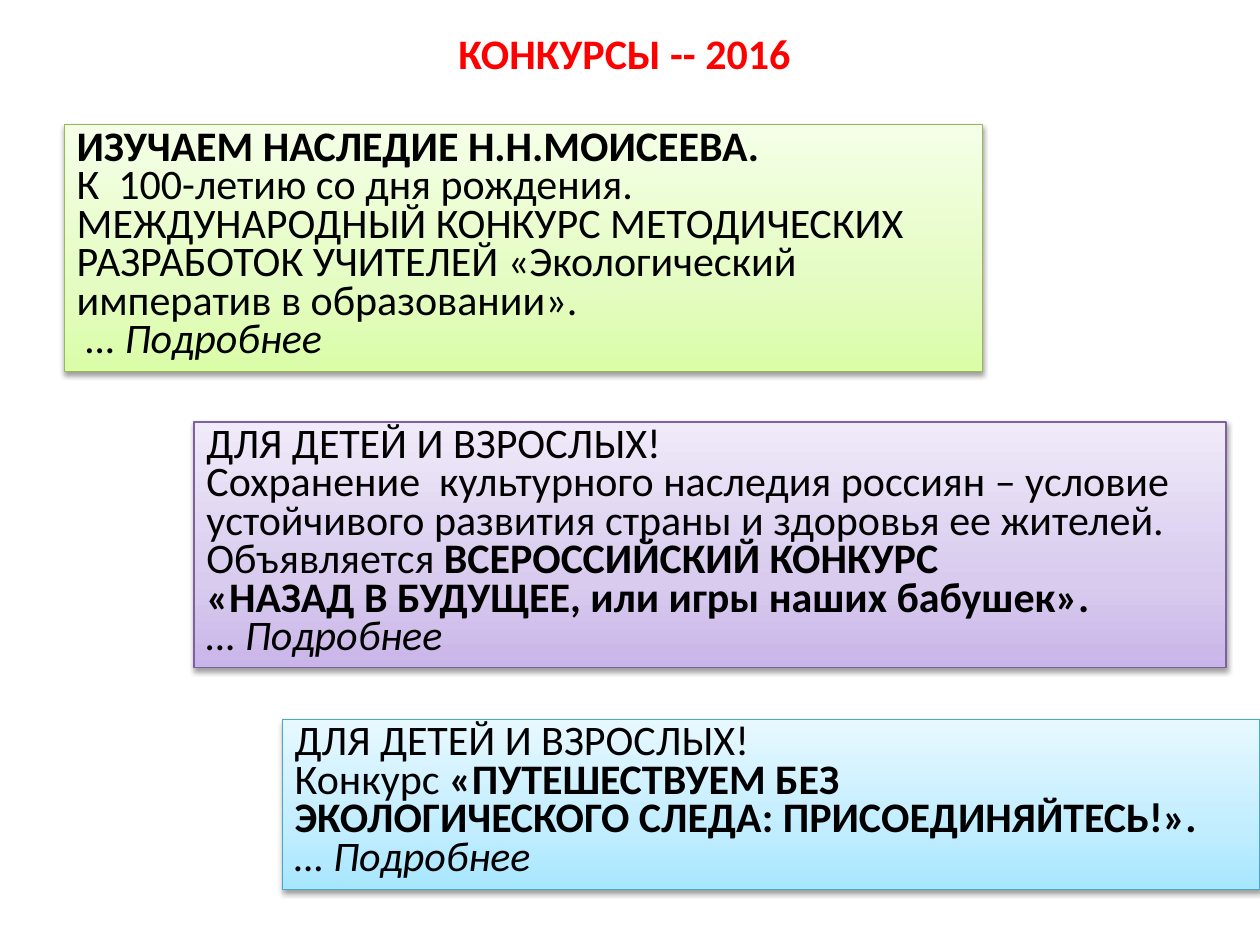
from copy import deepcopy

from lxml import etree
from pptx import Presentation
from pptx.dml.color import RGBColor
from pptx.enum.shapes import MSO_SHAPE
from pptx.enum.text import MSO_ANCHOR, MSO_AUTO_SIZE, PP_ALIGN
from pptx.oxml.ns import qn
from pptx.util import Inches, Pt

RECTANGLE = MSO_SHAPE.RECTANGLE
TOP = MSO_ANCHOR.TOP
FIT_SHAPE = MSO_AUTO_SIZE.SHAPE_TO_FIT_TEXT
LEFT = PP_ALIGN.LEFT

BLACK = RGBColor(0x00, 0x00, 0x00)
RED = RGBColor(0xFF, 0x00, 0x00)
GREEN_LINE = RGBColor(0x98, 0xB9, 0x55)
GREENS = (RGBColor(0xDA, 0xFD, 0xA7), RGBColor(0xE4, 0xFC, 0xC2), RGBColor(0xF5, 0xFF, 0xE7))
PURPLE_LINE = RGBColor(0x7D, 0x60, 0xA0)
PURPLES = (RGBColor(0xC9, 0xB5, 0xE8), RGBColor(0xD8, 0xCB, 0xEE), RGBColor(0xF0, 0xEA, 0xF9))
BLUE_LINE = RGBColor(0x46, 0xAA, 0xC5)
BLUES = (RGBColor(0xA7, 0xE6, 0xFF), RGBColor(0xC1, 0xED, 0xFF), RGBColor(0xE7, 0xF8, 0xFF))

PLAIN, BOLD, ITALIC = "plain", "bold", "italic"
AUDIENCE = [("ДЛЯ ДЕТЕЙ И ВЗРОСЛЫХ!", PLAIN)]
MORE = ("… Подробнее", ITALIC)

CONTESTS = [
    ((5.1, 9.9, 72.9, 19.6), GREENS, GREEN_LINE, [
        [("ИЗУЧАЕМ НАСЛЕДИЕ Н.Н.МОИСЕЕВА.", BOLD)],
        [("К  100-летию со дня рождения. МЕЖДУНАРОДНЫЙ КОНКУРС МЕТОДИЧЕСКИХ "
          "РАЗРАБОТОК УЧИТЕЛЕЙ «Экологический императив в образовании».", PLAIN)],
        [(" ", PLAIN), MORE],
    ]),
    ((15.4, 33.5, 81.9, 19.5), PURPLES, PURPLE_LINE, [
        AUDIENCE,
        [("Сохранение  культурного наследия россиян – условие", PLAIN)],
        [("устойчивого развития страны и здоровья ее жителей.", PLAIN)],
        [("Объявляется ", PLAIN), ("ВСЕРОССИЙСКИЙ КОНКУРС", BOLD)],
        [("«НАЗАД В БУДУЩЕЕ, или игры наших бабушек».", BOLD)],
        [MORE],
    ]),
    ((22.4, 57.1, 77.6, 13.5), BLUES, BLUE_LINE, [
        AUDIENCE,
        [("Конкурс ", PLAIN), ("«ПУТЕШЕСТВУЕМ БЕЗ", BOLD)],
        [("ЭКОЛОГИЧЕСКОГО СЛЕДА: ПРИСОЕДИНЯЙТЕСЬ!».", BOLD)],
        [MORE],
    ]),
]


class ContestSlide:
    """Draws on one slide with a shared style and a grid of 100 columns by 75 rows."""

    font_name = "Calibri"
    font_size = Pt(24)
    leading = Pt(22)
    stop_positions = (0, 0.35, 1)

    def __init__(self, deck):
        self.slide = deck.slides.add_slide(deck.slide_layouts[6])
        self.column = deck.slide_width / 100
        self.row = deck.slide_height / 75

    def place(self, left, top, width, height):
        return (round(left * self.column), round(top * self.row),
                round(width * self.column), round(height * self.row))

    def style(self, paragraph, color):
        paragraph.alignment = LEFT
        paragraph.font.name = self.font_name
        paragraph.font.size = self.font_size
        paragraph.font.color.rgb = color

    def title(self, area, text):
        heading = self.slide.shapes.add_textbox(*self.place(*area)).text_frame
        heading.word_wrap = False
        heading.auto_size = FIT_SHAPE
        paragraph = heading.paragraphs[0]
        paragraph.text = text
        self.style(paragraph, RED)
        paragraph.font.bold = True

    def gradient(self, card, colors):
        card.fill.gradient()
        card.fill.gradient_angle = 90
        first_stop = card.fill._fill._gradFill.gsLst[0]
        first_stop.addnext(deepcopy(first_stop))
        for stop, position, color in zip(card.fill.gradient_stops, self.stop_positions, colors):
            stop.position = position
            stop.color.rgb = color

    def drop_shadow(self, card):
        card.shadow.inherit = False
        effects = card._element.spPr.find(qn("a:effectLst"))
        shadow = etree.SubElement(effects, qn("a:outerShdw"), blurRad=str(Pt(3.1)),
                                  dist=str(Pt(1.6)), dir="5400000", rotWithShape="0")
        black = etree.SubElement(shadow, qn("a:srgbClr"), val=str(BLACK))
        etree.SubElement(black, qn("a:alpha"), val="38000")

    def card(self, area, colors, line_color, lines):
        card = self.slide.shapes.add_shape(RECTANGLE, *self.place(*area))
        self.gradient(card, colors)
        card.line.color.rgb = line_color
        card.line.width = Pt(0.75)
        self.drop_shadow(card)
        body = card.text_frame
        body.word_wrap = True
        body.auto_size = FIT_SHAPE
        body.vertical_anchor = TOP
        for index, line in enumerate(lines):
            paragraph = body.add_paragraph() if index else body.paragraphs[0]
            self.style(paragraph, BLACK)
            paragraph.line_spacing = self.leading
            for text, emphasis in line:
                run = paragraph.add_run()
                run.text = text
                font = paragraph.font if len(line) == 1 else run.font
                font.bold = emphasis == BOLD
                font.italic = emphasis == ITALIC


def main():
    deck = Presentation()
    deck.slide_width, deck.slide_height = Inches(10), Inches(7.5)
    page = ContestSlide(deck)
    for contest in CONTESTS:
        page.card(*contest)
    page.title((35.4, 1.7, 28.6, 5), "КОНКУРСЫ -- 2016")
    deck.save("out.pptx")


if __name__ == "__main__":
    main()
